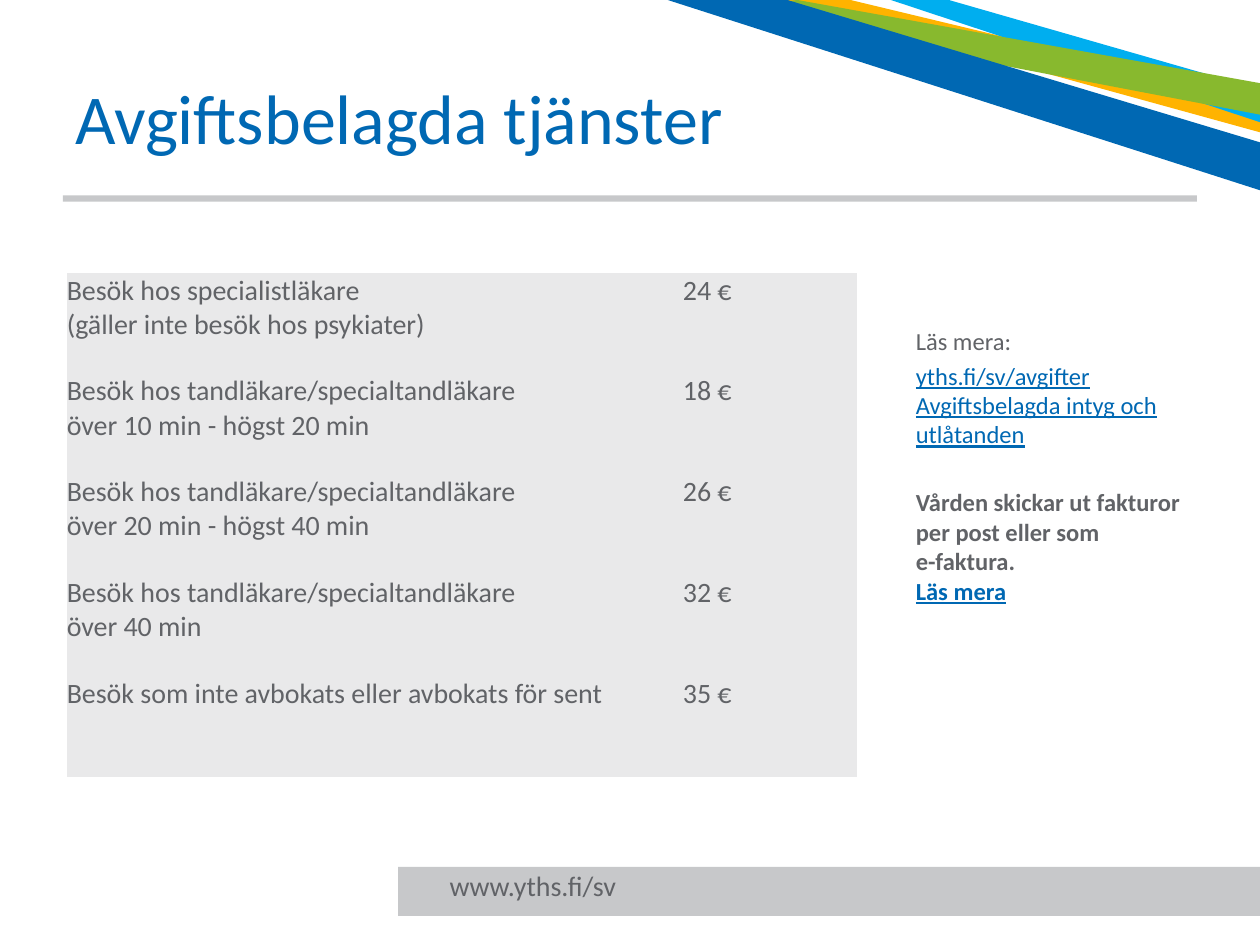
from pptx import Presentation
from pptx.dml.color import RGBColor
from pptx.enum.shapes import MSO_SHAPE
from pptx.enum.text import MSO_ANCHOR
from pptx.util import Inches, Pt

BLUE, TEXT_GREY, BAR_GREY, CELL_GREY = "0068B3", "616367", "C7C8CA", "E9E9EA"
NO_STYLE_NO_GRID = "{2D5ABB26-0587-4C30-8999-92F81FD0307C}"

presentation = Presentation()
presentation.slide_width, presentation.slide_height = Inches(10), Inches(7.5)
slide = presentation.slides.add_slide(presentation.slide_layouts[6])
shapes = slide.shapes

# Grid of 100 columns by 75 rows
COLUMN = presentation.slide_width // 100
ROW = presentation.slide_height // 75


def area(left, top, width, height):
    """Turn grid columns and rows into slide lengths."""
    return (round(left * COLUMN), round(top * ROW),
            round(width * COLUMN), round(height * ROW))


def add_run(paragraph, text, size, color=TEXT_GREY, bold=False, underline=False):
    """Add formatted text, with a line break for each newline."""
    for index, line in enumerate(text.split("\n")):
        if index:
            paragraph.add_line_break()
        run = paragraph.add_run()
        run.text = line
        font = run.font
        font.name, font.size = "Calibri", Pt(size)
        font.bold, font.underline = bold, underline
        font.color.rgb = RGBColor.from_string(color)


# Footer bar and rule under the title
for bar_area in [(31.6, 68.8, 68.4, 3.9), (5, 15.5, 90, 0.5)]:
    bar = shapes.add_shape(MSO_SHAPE.RECTANGLE, *area(*bar_area))
    bar.shadow.inherit = False
    bar.fill.solid()
    bar.fill.fore_color.rgb = RGBColor.from_string(BAR_GREY)
    bar.line.fill.background()

# Ribbons in the top right corner, from back to front
ribbons = [
    ("FFB300", [(67.5, 0), (100, 7.8), (100, 10.5), (61.9, 0)]),
    ("00AEEF", [(75.3, 0), (100, 7.1), (100, 9.7), (70.7, 0)]),
    ("88B92E", [(63.3, 0), (100, 6.6), (100, 9.1), (56.6, 0.8)]),
    (BLUE, [(62.5, 0), (100, 11.3), (100, 15.1), (53, 0)]),
]
for color, corners in ribbons:
    points = [(round(x * COLUMN), round(y * ROW)) for x, y in corners]
    builder = shapes.build_freeform(*points[0])
    builder.add_line_segments(points[1:], close=True)
    ribbon = builder.convert_to_shape()
    ribbon.shadow.inherit = False
    ribbon.fill.solid()
    ribbon.fill.fore_color.rgb = RGBColor.from_string(color)
    ribbon.line.fill.background()

# Title and footer address
for text, text_area, size, color in [
    ("Avgiftsbelagda tjänster", (5, 3, 82.3, 12.5), 40, BLUE),
    ("www.yths.fi/sv", (34.7, 68.4, 43.8, 3.7), 16, TEXT_GREY),
]:
    frame = shapes.add_textbox(*area(*text_area)).text_frame
    frame.word_wrap = True
    frame.vertical_anchor = MSO_ANCHOR.MIDDLE
    add_run(frame.paragraphs[0], text, size, color)

# Price table
prices = [
    ("Besök hos specialistläkare\n(gäller inte besök hos psykiater)", "24 €"),
    ("Besök hos tandläkare/specialtandläkare\növer 10 min - högst 20 min", "18 €"),
    ("Besök hos tandläkare/specialtandläkare\növer 20 min - högst 40 min", "26 €"),
    ("Besök hos tandläkare/specialtandläkare\növer 40 min", "32 €"),
    ("Besök som inte avbokats eller avbokats för sent", "35 €"),
]
table_frame = shapes.add_table(len(prices), 2, *area(5.3, 21.7, 62.7, 40))
table_frame.element.xpath(".//a:tableStyleId")[0].text = NO_STYLE_NO_GRID
table = table_frame.table
table.first_row = table.horz_banding = False
for table_column, columns in zip(table.columns, (48.9, 13.8)):
    table_column.width = round(columns * COLUMN)
for row_index, row in enumerate(prices):
    for column_index, text in enumerate(row):
        cell = table.cell(row_index, column_index)
        cell.margin_left = cell.margin_right = 0
        cell.margin_top = cell.margin_bottom = 0
        cell.fill.solid()
        cell.fill.fore_color.rgb = RGBColor.from_string(CELL_GREY)
        add_run(cell.text_frame.paragraphs[0], text, 16)

# Side note: space before each paragraph, then its runs
side_note = [
    (0, [("Läs mera:", TEXT_GREY, False, False)]),
    (2.8, [("yths.fi/sv/avgifter\nAvgiftsbelagda intyg och utlåtanden",
            BLUE, False, True)]),
    (22, [("Vården skickar ut fakturor per post eller som\ne-faktura.\n",
           TEXT_GREY, True, False),
          ("Läs mera", BLUE, True, True)]),
]
frame = shapes.add_textbox(*area(71.7, 25.4, 24.4, 26.5)).text_frame
frame.word_wrap = True
for index, (space, runs) in enumerate(side_note):
    paragraph = frame.add_paragraph() if index else frame.paragraphs[0]
    paragraph.space_before = Pt(space)
    for text, color, bold, underline in runs:
        add_run(paragraph, text, 14, color, bold, underline)

presentation.save("out.pptx")
